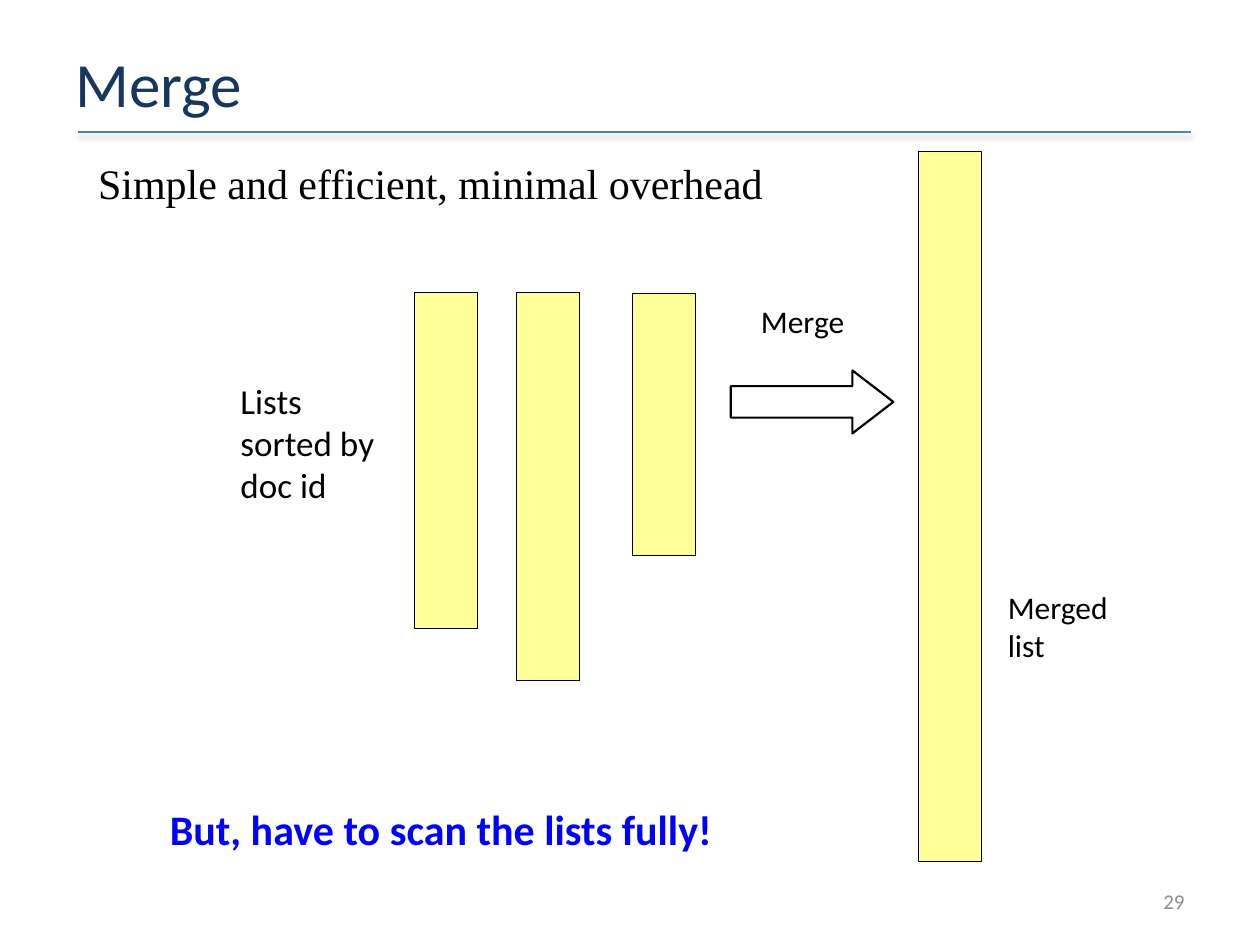
from lxml import etree
from pptx import Presentation
from pptx.dml.color import RGBColor
from pptx.enum.shapes import MSO_CONNECTOR, MSO_SHAPE
from pptx.enum.text import MSO_ANCHOR as Anchor, PP_ALIGN as Align
from pptx.oxml import parse_xml
from pptx.oxml.ns import nsdecls
from pptx.util import Inches, Pt

BAR_WIDTH = 0.5
BARS = [
    (3.29, 2.32, 2.67),
    (4.1, 2.32, 3.08),
    (5.02, 2.33, 2.08),
    (7.29, 1.2, 5.64),
]
ARROW = (5.8, 2.94, 1.29, 0.5)
RULE = (0.62, 1.05, 9.45, 1.05)
TEXTS = [
    ("Merge", (0.5, 0.3, 9, 0.71), "17375E", {"size": Pt(36)}, {}, Anchor.MIDDLE),
    ("Simple and efficient, minimal overhead", (0.68, 1.2, 6.36, 0.76), "000000",
     {"size": Pt(24), "name": "Times New Roman"}, {"space_before": Pt(4.8)}, Anchor.TOP),
    ("Lists sorted by doc id", (1.81, 2.96, 1.42, 1.1), "000000",
     {"size": Pt(20)}, {}, Anchor.TOP),
    ("Merge", (5.66, 2.35, 1.42, 0.4), "000000",
     {"size": Pt(18)}, {"alignment": Align.CENTER}, Anchor.TOP),
    ("Merged list", (7.9, 4.62, 1.17, 0.7), "000000", {"size": Pt(18)}, {}, Anchor.TOP),
    ("But, have to scan the lists fully!", (1.25, 6.33, 5.46, 0.5), "0000FF",
     {"size": Pt(24), "bold": True}, {}, Anchor.TOP),
    ("29", (7.17, 6.95, 2.33, 0.4), "8C8C8C",
     {"size": Pt(12)}, {"alignment": Align.RIGHT}, Anchor.MIDDLE),
]


def paint(color_format, color):
    color_format.rgb = RGBColor.from_string(color)


def apply(target, values):
    for name, value in values.items():
        setattr(target, name, value)


def add_rule(page):
    rule = page.shapes.add_connector(MSO_CONNECTOR.STRAIGHT, *map(Inches, RULE))
    paint(rule.line.color, "4F81BD")
    rule.line.width = Pt(1)
    effects = parse_xml(f"<a:effectLst {nsdecls('a')}/>")
    shadow = etree.SubElement(
        effects, effects.tag.replace("effectLst", "outerShdw"),
        blurRad=str(Pt(3.1)), dist=str(Pt(1.6)), dir="5400000", rotWithShape="0")
    color = etree.SubElement(
        shadow, effects.tag.replace("effectLst", "srgbClr"), val="000000")
    etree.SubElement(color, effects.tag.replace("effectLst", "alpha"), val="38000")
    rule.line._get_or_add_ln().addnext(effects)


def add_outlined(page, kind, place, fill, width):
    shape = page.shapes.add_shape(kind, *map(Inches, place))
    shape.shadow.inherit = False
    shape.fill.solid()
    paint(shape.fill.fore_color, fill)
    paint(shape.line.color, "000000")
    shape.line.width = Pt(width)
    return shape


def add_text(page, text, place, color, font, layout, anchor):
    box = page.shapes.add_textbox(*map(Inches, place))
    apply(box.text_frame, {"word_wrap": True, "vertical_anchor": anchor})
    para = box.text_frame.paragraphs[0]
    apply(para, layout)
    span = para.add_run()
    span.text = text
    apply(span.font, {"name": "Calibri", **font})
    paint(span.font.color, color)


def main():
    deck = Presentation()
    apply(deck, {"slide_width": Inches(10), "slide_height": Inches(7.5)})
    page = deck.slides.add_slide(deck.slide_layouts[6])
    add_rule(page)
    for left, top, height in BARS:
        add_outlined(page, MSO_SHAPE.RECTANGLE,
                     (left, top, BAR_WIDTH, height), "FFFF99", 0.75)
    arrow = add_outlined(page, MSO_SHAPE.RIGHT_ARROW, ARROW, "FFFFFF", 1.25)
    arrow.adjustments[0] = 0.5
    arrow.adjustments[1] = 0.65
    for entry in TEXTS:
        add_text(page, *entry)
    deck.save("out.pptx")


if __name__ == "__main__":
    main()
